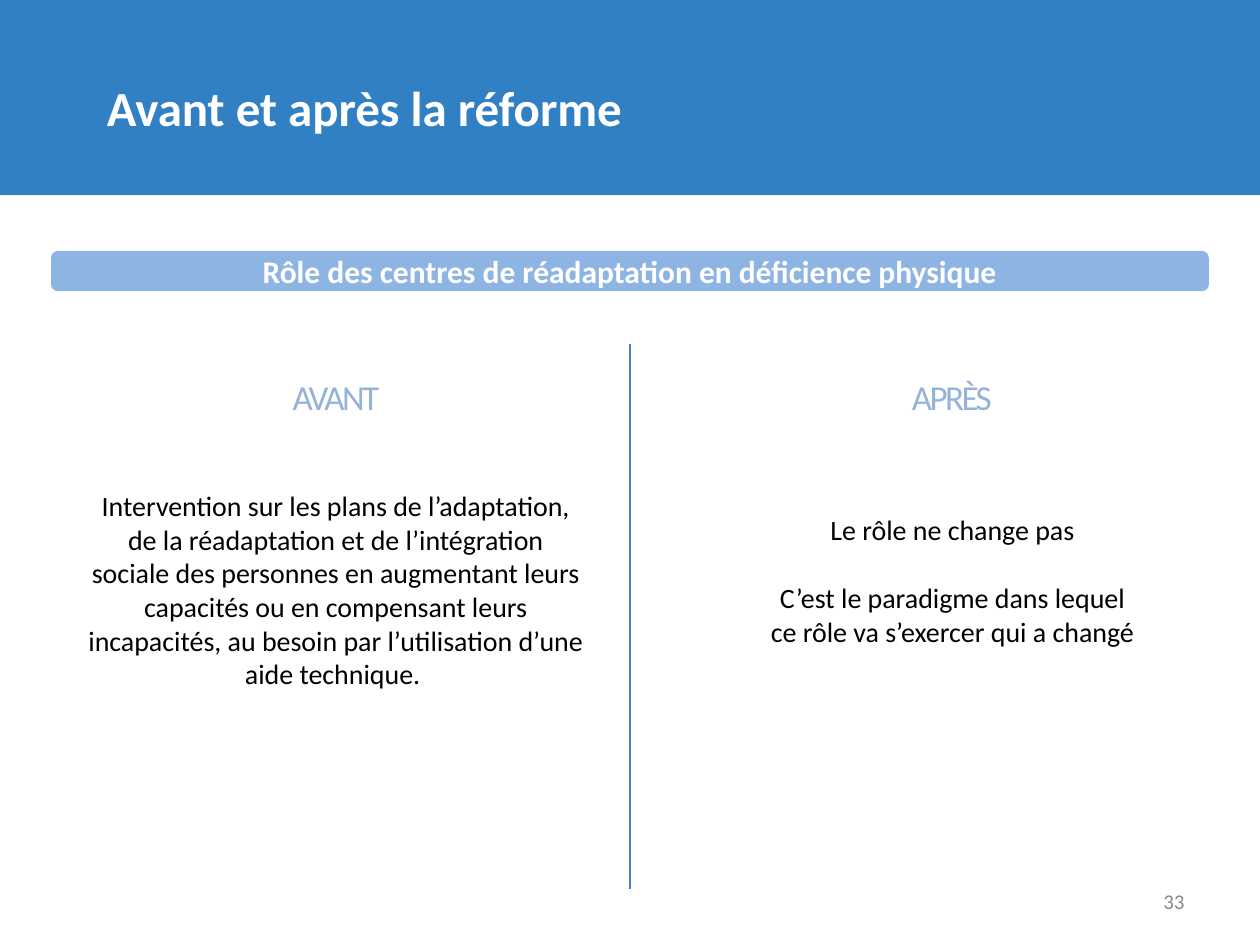
from lxml import etree
from pptx import Presentation
from pptx import util as u
from pptx.dml.color import RGBColor
from pptx.enum import shapes, text
from pptx.oxml.ns import qn

LEFT, CENTER, RIGHT = text.PP_ALIGN.LEFT, text.PP_ALIGN.CENTER, text.PP_ALIGN.RIGHT
TOP, MIDDLE = text.MSO_ANCHOR.TOP, text.MSO_ANCHOR.MIDDLE
BEFORE = (
    "Intervention sur les plans de l’adaptation, de la réadaptation et de l’intégration "
    "sociale des personnes en augmentant leurs capacités ou en compensant leurs "
    "incapacités, au besoin par l’utilisation d’une aide technique. "
)
AFTER = "Le rôle ne change pas\nC’est le paradigme dans lequel ce rôle va s’exercer qui a changé"


def color(value):
    """Turn a hex string into a colour."""
    return RGBColor.from_string(value)


def write(shape, content, size=16, fill="000000", bold=False, align=CENTER,
          anchor=TOP, line_spacing=None, gap=0, tracking=None):
    """Write one paragraph per line of content, with the given format."""
    frame = shape.text_frame
    frame.word_wrap = True
    frame.vertical_anchor = anchor
    for index, line in enumerate(content.split("\n")):
        paragraph = frame.add_paragraph() if index else frame.paragraphs[0]
        paragraph.alignment = align
        if line_spacing:
            paragraph.line_spacing = u.Pt(line_spacing)
        if index:
            paragraph.space_before = u.Pt(gap)
        run = paragraph.add_run()
        run.text = line
        run.font.name = "Calibri"
        run.font.size = u.Pt(size)
        run.font.bold = bold
        run.font.color.rgb = color(fill)
        if tracking:
            run.font._element.set("spc", str(int(tracking * 100)))


def add_label(slide, box, content, **style):
    """Add a text box at left, top, width, height."""
    write(slide.shapes.add_textbox(*map(u.Pt, box)), content, **style)


def add_band(slide, preset, box, fill):
    """Add a filled shape without outline or shadow."""
    shape = slide.shapes.add_shape(preset, *map(u.Pt, box))
    shape.shadow.inherit = False
    shape.fill.solid()
    shape.fill.fore_color.rgb = color(fill)
    shape.line.fill.background()
    return shape


def add_divider(slide, x, top, bottom, fill):
    """Add a thin vertical line."""
    line = slide.shapes.add_connector(
        shapes.MSO_CONNECTOR.STRAIGHT, u.Pt(x), u.Pt(top), u.Pt(x), u.Pt(bottom))
    line.line.color.rgb = color(fill)
    line.line.width = u.Pt(0.75)
    etree.SubElement(line._element.spPr, qn("a:effectLst"))


def main():
    """Build the before and after slide."""
    presentation = Presentation()
    presentation.slide_width, presentation.slide_height = u.Pt(720), u.Pt(540)
    slide = presentation.slides.add_slide(presentation.slide_layouts[6])

    add_band(slide, shapes.MSO_SHAPE.RECTANGLE, (0, 0, 720, 111.5), "3080C3")
    add_label(slide, (54, 30.2, 481.7, 51.1), "Avant et après la réforme", size=28,
              fill="FFFFFF", bold=True, align=LEFT, anchor=MIDDLE, line_spacing=44)
    topic = add_band(slide, shapes.MSO_SHAPE.ROUNDED_RECTANGLE,
                     (29.2, 143.4, 661.6, 23), "8EB4E3")
    write(topic, "Rôle des centres de réadaptation en déficience physique",
          size=18, fill="FFFFFF", bold=True, anchor=MIDDLE)

    add_divider(slide, 360, 196.5, 508.3, "4B7EBC")
    for left, heading in ((42.5, "AVANT"), (394.5, "APRÈS")):
        add_label(slide, (left, 211, 298.8, 22.3), heading,
                  size=20, fill="95B3D7", tracking=-1.5)
    add_label(slide, (42.5, 275.8, 298.8, 113), BEFORE)
    add_label(slide, (429.8, 289.5, 229, 88.5), AFTER, gap=19.5)
    add_label(slide, (516, 500.4, 168, 28.8), "33",
              size=12, fill="898989", align=RIGHT, anchor=MIDDLE)
    presentation.save("out.pptx")


if __name__ == "__main__":
    main()
